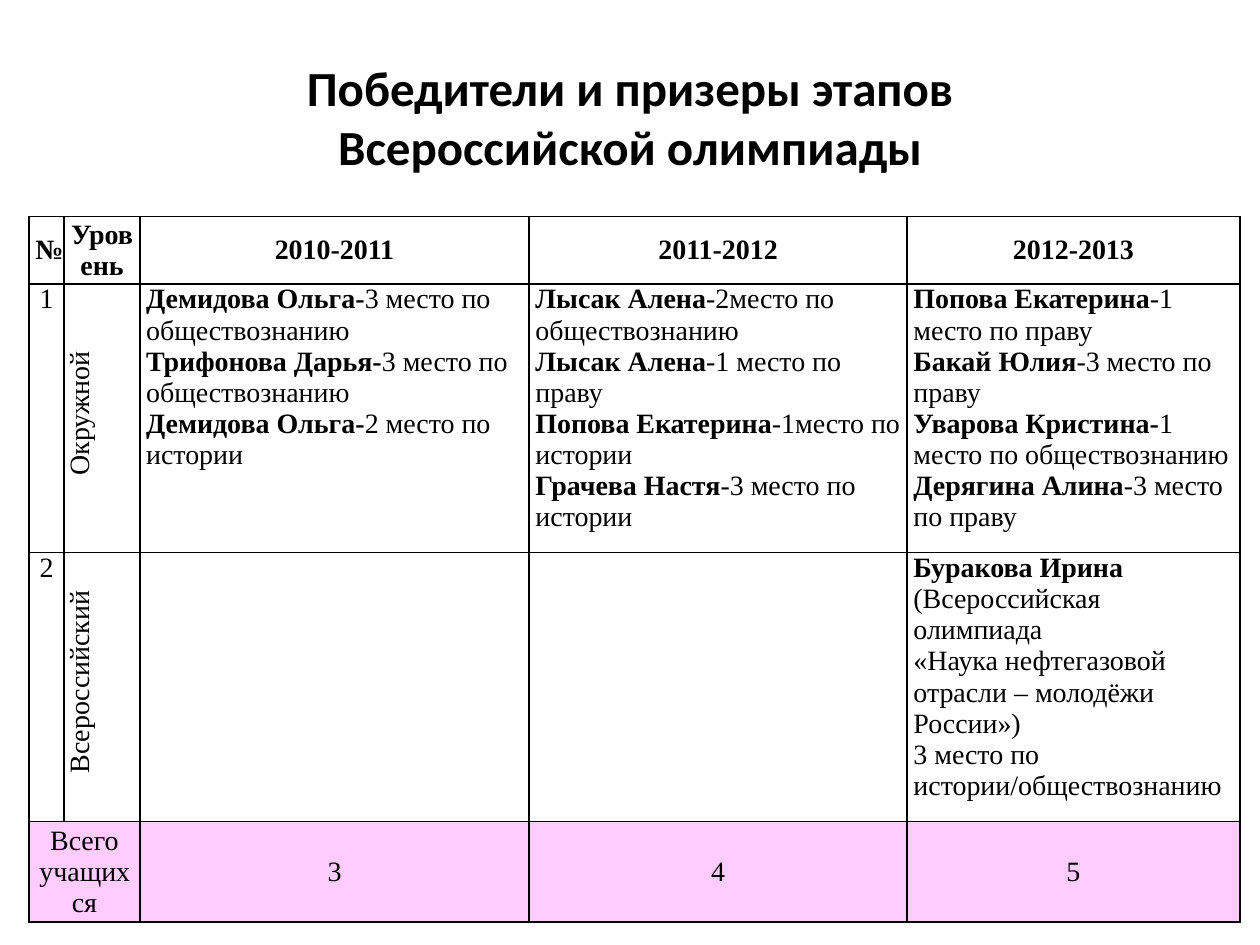
"""Builds a slide with a table of olympiad winners by school year."""
from lxml.etree import fromstring
from pptx import Presentation
from pptx.dml.color import RGBColor
from pptx.enum.text import MSO_ANCHOR as ANCHOR, PP_ALIGN as ALIGN
from pptx.oxml.ns import nsdecls
from pptx.util import Inches, Pt

BLACK = RGBColor(0, 0, 0)
PINK = RGBColor(0xFF, 0xCC, 0xFF)
TITLE_FONT = {"name": "Calibri", "size": Pt(28), "bold": True}
CELL_FONT = {"name": "Times New Roman", "size": Pt(16), "bold": False}
MARGINS = {"margin_left": Inches(0.05), "margin_right": Inches(0.05),
           "margin_top": 0, "margin_bottom": 0}
COLS = [0.28, 0.6, 3.09, 3, 2.64]
ROWS = [0.49, 1.97, 1.97, 0.74]

HEADER = ["№", "Уровень", "2010-2011", "2011-2012", "2012-2013"]
LEVELS = ["Окружной", "Всероссийский"]
TOTALS = ["Всего учащихся", None, "3", "4", "5"]
WINNERS = {
    (1, 2): [("Демидова Ольга-", "3 место по обществознанию"),
             ("Трифонова Дарья-", "3 место по обществознанию"),
             ("Демидова Ольга-", "2 место по истории")],
    (1, 3): [("Лысак Алена", "-2место по обществознанию"),
             ("Лысак Алена", "-1 место по праву"),
             ("Попова Екатерина", "-1место по истории"),
             ("Грачева Настя", "-3 место по истории")],
    (1, 4): [("Попова Екатерина", "-1 место по праву"),
             ("Бакай Юлия", "-3 место по праву"),
             ("Уварова Кристина-", "1 место по обществознанию"),
             ("Дерягина Алина", "-3 место по праву")],
    (2, 4): [("Буракова Ирина", ""),
             ("", "(Всероссийская олимпиада"),
             ("", "«Наука нефтегазовой отрасли – молодёжи России»)"),
             ("", "3 место по истории/обществознанию")],
}


class SlideBuilder:
    """Holds the current slide and the style of its elements."""

    def __init__(self, slide, color=BLACK):
        self.slide = slide
        self.color = color

    def style(self, font, fmt):
        """Apply a dict of font values."""
        for key, value in fmt.items():
            setattr(font, key, value)
        font.color.rgb = self.color

    def title(self, text, x, y, w, h):
        """Add a centred heading."""
        sp = self.slide.shapes.add_textbox(*map(Inches, (x, y, w, h)))
        tf = sp.text_frame
        tf.word_wrap = True
        tf.vertical_anchor = ANCHOR.MIDDLE
        p = tf.paragraphs[0]
        p.text = text
        p.alignment = ALIGN.CENTER
        for r in p.runs:
            self.style(r.font, TITLE_FONT)

    def table(self, x, y, cols, rows):
        """Add a table with plain bordered cells."""
        size = map(Inches, (x, y, sum(cols), sum(rows)))
        table = self.slide.shapes.add_table(len(rows), len(cols), *size).table
        table.first_row = table.horz_banding = False
        for col, width in zip(table.columns, cols):
            col.width = Inches(width)
        for row, height in zip(table.rows, rows):
            row.height = Inches(height)
        for cell in table.iter_cells():
            for key, value in MARGINS.items():
                setattr(cell, key, value)
            cell.fill.background()
            self.borders(cell)
        return table

    def borders(self, cell):
        """Draw one-point lines on all four sides of a cell."""
        tc_pr = cell._tc.get_or_add_tcPr()
        for i, side in enumerate("LRTB"):
            tc_pr.insert(i, fromstring(
                f'<a:ln{side} {nsdecls("a")} w="{Pt(1)}"><a:solidFill>'
                f'<a:srgbClr val="{self.color}"/></a:solidFill></a:ln{side}>'))

    def cell(self, cell, lines, align=ALIGN.CENTER, anchor=ANCHOR.MIDDLE):
        """Fill a cell with lines, each a pair of bold and regular text."""
        cell.vertical_anchor = anchor
        tf = cell.text_frame
        for i, line in enumerate(lines):
            p = tf.add_paragraph() if i else tf.paragraphs[0]
            p.alignment = align
            for text, bold in zip(line, (True, False)):
                if text:
                    r = p.add_run()
                    r.text = text
                    self.style(r.font, {**CELL_FONT, "bold": bold})

    def vertical_cell(self, cell, text):
        """Fill a cell with text that reads upwards."""
        self.cell(cell, [("", text)])
        cell._tc.get_or_add_tcPr().set("vert", "vert270")
        p = cell.text_frame.paragraphs[0]
        p._p.get_or_add_pPr().set("marL", str(Inches(0.08)))


def main():
    """Build and save the slide."""
    prs = Presentation()
    prs.slide_width, prs.slide_height = Inches(10), Inches(7.5)
    s = SlideBuilder(prs.slides.add_slide(prs.slide_layouts[6]))
    s.title("Победители и призеры этапов\nВсероссийской олимпиады", 0.5, 0.3, 9, 1.25)

    table = s.table(0.23, 1.72, COLS, ROWS)
    for col, text in enumerate(HEADER):
        s.cell(table.cell(0, col), [(text, "")])
    for row, level in enumerate(LEVELS, 1):
        s.cell(table.cell(row, 0), [("", str(row))], anchor=ANCHOR.TOP)
        s.vertical_cell(table.cell(row, 1), level)
    for place, lines in WINNERS.items():
        s.cell(table.cell(*place), lines, ALIGN.LEFT, ANCHOR.TOP)

    table.cell(3, 0).merge(table.cell(3, 1))
    for col, text in enumerate(TOTALS):
        cell = table.cell(3, col)
        cell.fill.solid()
        cell.fill.fore_color.rgb = PINK
        if text:
            s.cell(cell, [("", text)])
    prs.save("out.pptx")


if __name__ == "__main__":
    main()
